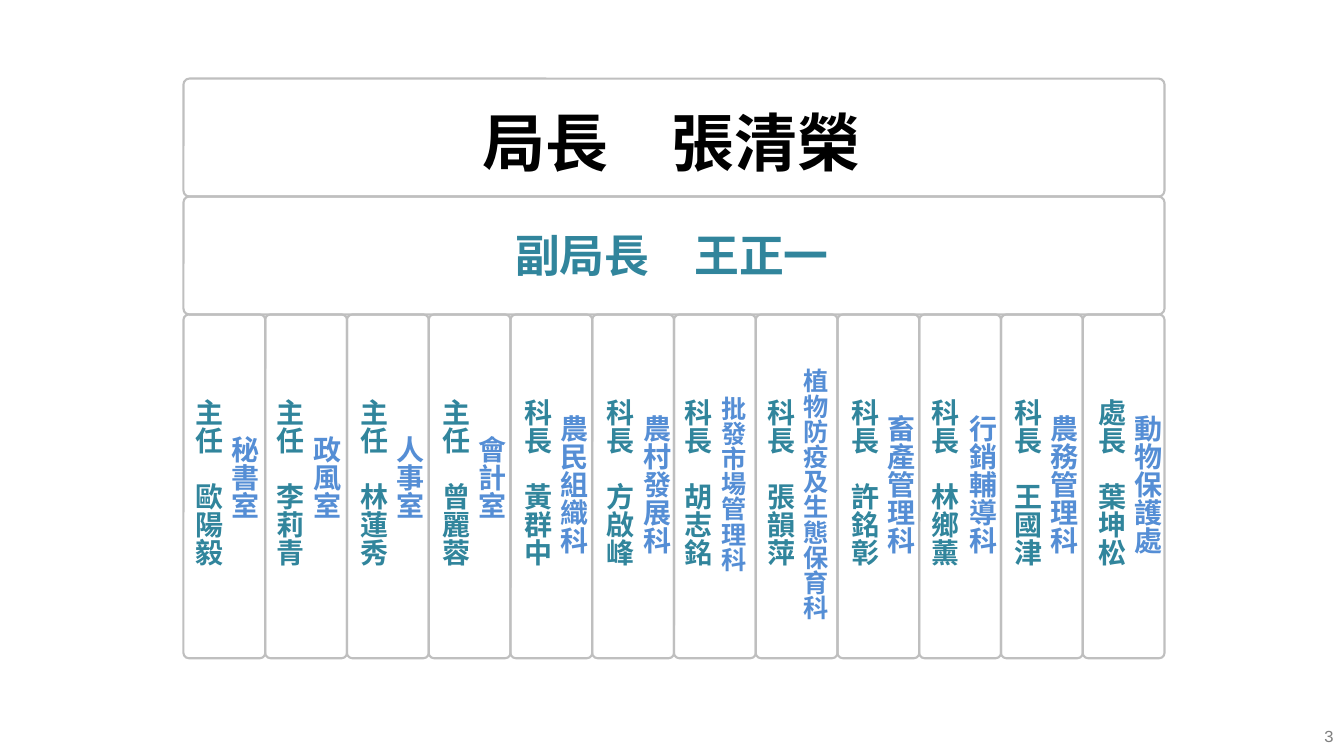
from pptx import Presentation
from pptx import util as u
from pptx.dml.color import RGBColor
from pptx.enum import shapes, text
from pptx.oxml.ns import qn
from lxml import etree

BORDER = RGBColor(0xBF, 0xBF, 0xBF)
BLACK = RGBColor(0, 0, 0)
TEAL = RGBColor(0x31, 0x85, 0x9C)
BLUE = RGBColor(0x55, 0x8E, 0xD5)
GRAY = RGBColor(0x80, 0x80, 0x80)
CJK_FONT = "Noto Sans CJK SC"
NUMBER_FONT = "Courier New"

# Chart grid, in inches
SLIDE_W, SLIDE_H = 13.33, 7.5
LEFT, TOP, WIDTH = 1.82, 0.78, 9.73
ROW_H, UNIT_H = 1.17, 3.41
UNIT_TOP = TOP + 2 * ROW_H
HEAD_TOP = 3.86

# Head of unit, its shift from the column's left edge, unit, gap between the two
UNITS = [
    ("主任　歐陽毅", -0.08, "秘書室", 0.36),
    ("主任　李莉青", -0.08, "政風室", 0.36),
    ("主任　林蓮秀", -0.06, "人事室", 0.36),
    ("主任　曾麗蓉", -0.06, "會計室", 0.36),
    ("科長　黃群中", -0.06, "農民組織科", 0.36),
    ("科長　方啟峰", -0.05, "農村發展科", 0.36),
    ("科長　胡志銘", -0.09, "批發市場管理科", 0.38),
    ("科長　張韻萍", -0.08, "植物防疫及生態保育科", 0.37),
    ("科長　許銘彰", -0.06, "畜產管理科", 0.36),
    ("科長　林鄉薰", -0.07, "行銷輔導科", 0.37),
    ("科長　王國津", -0.06, "農務管理科", 0.36),
    ("處長　葉坤松", -0.04, "動物保護處", 0.36),
]
UNIT_NAME_TOPS = {3: 4.23, 5: 4.02, 7: 3.83, 10: 3.56}  # by number of characters
COL_W = WIDTH / len(UNITS)


def add_frame(slide, left, top, width, height, corner):
    frame = slide.shapes.add_shape(
        shapes.MSO_SHAPE.ROUNDED_RECTANGLE,
        u.Inches(left), u.Inches(top), u.Inches(width), u.Inches(height))
    frame.adjustments[0] = corner
    frame.shadow.inherit = False
    frame.fill.background()
    frame.line.color.rgb = BORDER
    frame.line.width = u.Pt(1.5)


def add_label(slide, words, left, top, width, height, size, color,
              font=CJK_FONT, bold=True):
    label = slide.shapes.add_textbox(
        u.Inches(left), u.Inches(top), u.Inches(width), u.Inches(height))
    label.text_frame.word_wrap = False
    label.text_frame.auto_size = text.MSO_AUTO_SIZE.SHAPE_TO_FIT_TEXT
    run = label.text_frame.paragraphs[0].add_run()
    run.text = words
    run.font.size = u.Pt(size)
    run.font.bold = bold
    run.font.color.rgb = color
    run.font.name = font
    # East Asian characters take their font from a separate element
    etree.SubElement(run.font._element, qn("a:ea")).set("typeface", font)
    return label


def add_vertical_label(slide, words, left, top, size, color):
    width = 0.14 + 0.02 * size
    height = 0.1 + 0.014 * size * len(words)
    label = add_label(slide, words, left, top, width, height, size, color)
    label.element.txBody.find(qn("a:bodyPr")).set("vert", "eaVert")


def add_unit(slide, column, head, shift, unit, gap):
    left = LEFT + column * COL_W
    add_frame(slide, left, UNIT_TOP, COL_W, UNIT_H, 0.064)
    add_vertical_label(slide, head, left + shift, HEAD_TOP, 20, TEAL)
    add_vertical_label(slide, unit, left + shift + gap, UNIT_NAME_TOPS[len(unit)],
                       18 if len(unit) > 5 else 20, BLUE)


def add_page_number(slide, number):
    width, height = 3.11, 0.4
    label = add_label(slide, number, SLIDE_W - width, SLIDE_H - height,
                      width, height, 12, GRAY, NUMBER_FONT, False)
    label.text_frame.auto_size = text.MSO_AUTO_SIZE.NONE
    label.text_frame.word_wrap = True
    label.text_frame.vertical_anchor = text.MSO_ANCHOR.MIDDLE
    label.text_frame.paragraphs[0].alignment = text.PP_ALIGN.RIGHT


def main():
    prs = Presentation()
    prs.slide_width = u.Inches(SLIDE_W)
    prs.slide_height = u.Inches(SLIDE_H)
    slide = prs.slides.add_slide(prs.slide_layouts[6])

    # Director and deputy director
    add_frame(slide, LEFT, TOP, WIDTH, ROW_H, 0.05)
    add_label(slide, "局長　張清榮", 4.69, 0.98, 3.99, 0.86, 45, BLACK)
    add_frame(slide, LEFT, TOP + ROW_H, WIDTH, ROW_H, 0.05)
    add_label(slide, "副局長　王正一", 5.01, 2.21, 3.34, 0.64, 32, TEAL)

    # Offices and divisions
    for column, unit in enumerate(UNITS):
        add_unit(slide, column, *unit)

    add_page_number(slide, "3")
    prs.save("out.pptx")


if __name__ == "__main__":
    main()
